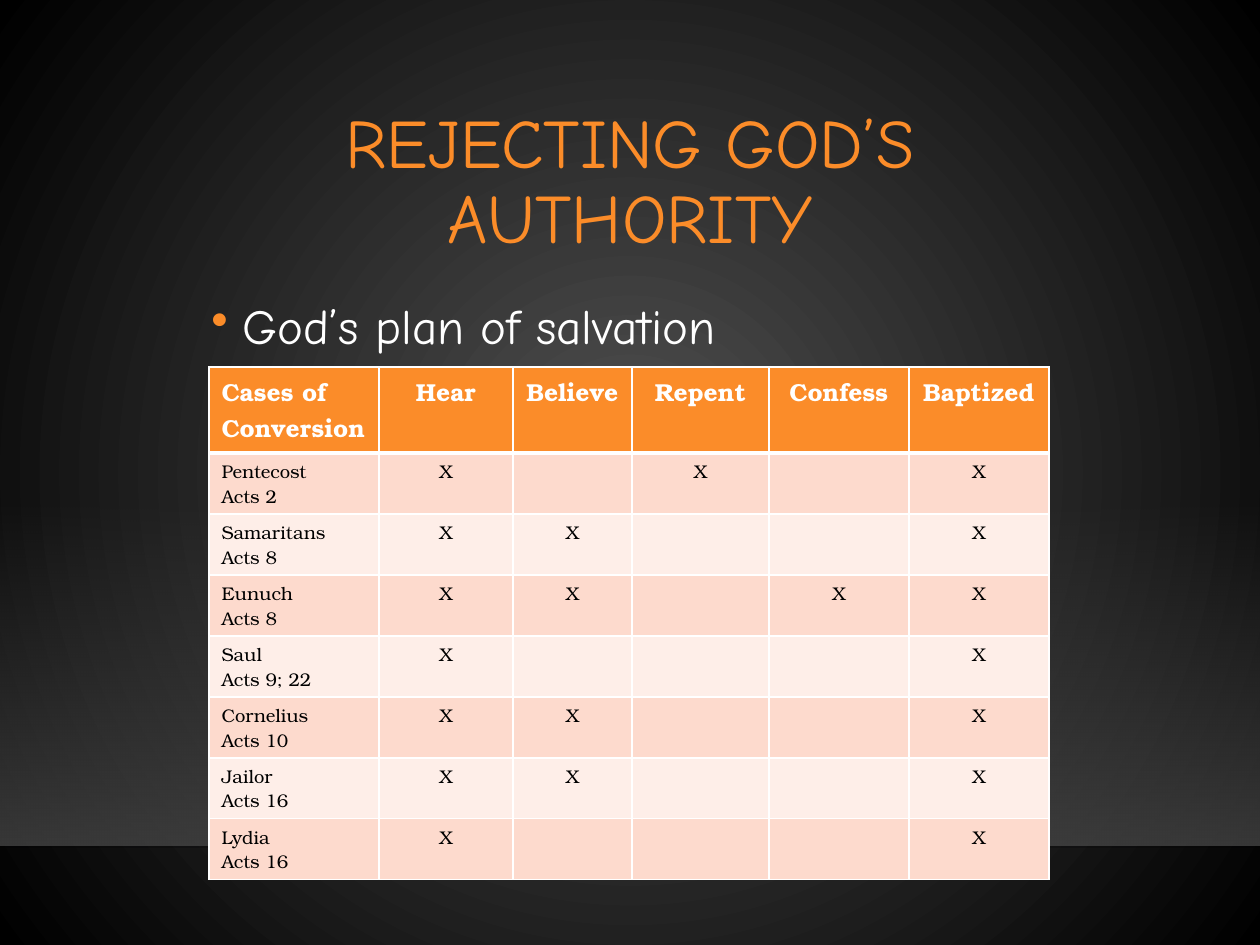
import pptx
import pptx.util
import pptx.oxml
import pptx.dml.color
import pptx.enum.shapes
import pptx.enum.text

PX = 914400 // 126
COLORS = {"accent": "FB8C29", "white": "FFFFFF", "black": "000000", "center": "505050",
          "floor": "454545", "edge": "000001", "band_dark": "FDDACD", "band_light": "FEEEE8"}
HEAD_FONT, TABLE_FONT = "Comic Neue", "TeX Gyre Bonum"
NS = 'xmlns:a="http://schemas.openxmlformats.org/drawingml/2006/main"'
ALIGN = pptx.enum.text.PP_ALIGN


def add_run(p, text, size, font, color, bold=False):
    r = p.add_run()
    r.text = text
    r.font.size = pptx.util.Pt(size)
    r.font.name = font
    r.font.bold = bold
    r.font.color.rgb = pptx.dml.color.RGBColor.from_string(COLORS[color])


def gradient(stops, direction):
    gs = "".join(f'<a:gs pos="{pos * 1000}"><a:srgbClr val="{COLORS[color]}">'
                 f'<a:alpha val="{alpha * 1000}"/></a:srgbClr></a:gs>' for pos, color, alpha in stops)
    return pptx.oxml.parse_xml(f'<a:gradFill {NS} rotWithShape="1"><a:gsLst>{gs}</a:gsLst>{direction}</a:gradFill>')


prs = pptx.Presentation()
prs.slide_width, prs.slide_height = 1260 * PX, 945 * PX
s = prs.slides.add_slide(prs.slide_layouts[5])

# Background: radial glow
s.background.fill.gradient()
old = s.background._cSld.bg.bgPr.find(pptx.oxml.ns.qn("a:gradFill"))
old.getparent().replace(old, gradient(
    [(0, "center", 100), (100, "black", 100)],
    '<a:path path="circle"><a:fillToRect l="50000" t="50000" r="50000" b="50000"/></a:path>'))

# Floor glow and its edge line
floor = s.shapes.add_shape(pptx.enum.shapes.MSO_SHAPE.RECTANGLE, 0, 499 * PX, 1260 * PX, 347 * PX)
floor.shadow.inherit = False
floor.line.fill.background()
floor.fill.gradient()
old = floor._element.spPr.find(pptx.oxml.ns.qn("a:gradFill"))
old.getparent().replace(old, gradient([(0, "floor", 0), (100, "floor", 80)], '<a:lin ang="5400000" scaled="0"/>'))

edge = s.shapes.add_connector(pptx.enum.shapes.MSO_CONNECTOR.STRAIGHT, 0, 847 * PX, 1260 * PX, 847 * PX)
edge.line.width = pptx.util.Pt(1)
edge.line.color.rgb = pptx.dml.color.RGBColor.from_string(COLORS["edge"])
edge_color = edge.line._ln.find(".//" + pptx.oxml.ns.qn("a:srgbClr"))
edge_color.append(pptx.oxml.parse_xml(f'<a:alpha {NS} val="20000"/>'))
edge._element.spPr.append(pptx.oxml.parse_xml(f"<a:effectLst {NS}/>"))

# Title
title = s.shapes.title
title.left, title.top, title.width, title.height = 199 * PX, 111 * PX, 862 * PX, 145 * PX
tf = title.text_frame
tf.vertical_anchor = pptx.enum.text.MSO_ANCHOR.MIDDLE
p = tf.paragraphs[0]
p.alignment = ALIGN.CENTER
p.line_spacing = 0.9
add_run(p, "REJECTING GOD’S AUTHORITY", 39.6, HEAD_FONT, "accent")

# Bullet line
tf = s.shapes.add_textbox(199 * PX, 278 * PX, 862 * PX, 475 * PX).text_frame
tf.word_wrap = True
p = tf.paragraphs[0]
pPr = p._p.get_or_add_pPr()
pPr.set("marL", "228600")
pPr.set("indent", "-228600")
for xml in (f'<a:buClr {NS}><a:srgbClr val="{COLORS["accent"]}"/></a:buClr>',
            f'<a:buChar {NS} char="•"/>'):
    pPr.append(pptx.oxml.parse_xml(xml))
p.line_spacing = 1.2
add_run(p, "God’s plan of salvation", 28, HEAD_FONT, "white")

# Table of conversions: case, passage, steps mentioned
steps = ["Hear", "Believe", "Repent", "Confess", "Baptized"]
cases = [
    ("Pentecost", "Acts 2", "Hear Repent Baptized"),
    ("Samaritans", "Acts 8", "Hear Believe Baptized"),
    ("Eunuch", "Acts 8", "Hear Believe Confess Baptized"),
    ("Saul", "Acts 9; 22", "Hear Baptized"),
    ("Cornelius", "Acts 10", "Hear Believe Baptized"),
    ("Jailor", "Acts 16", "Hear Believe Baptized"),
    ("Lydia", "Acts 16", "Hear Baptized"),
]
rows = [[["Cases of Conversion"]] + [[step] for step in steps]]
for name, passage, found in cases:
    rows.append([[name, passage]] + [["X"] if step in found.split() else [] for step in steps])

widths = [170, 134, 119, 137, 140, 140]
heights = [86] + [61] * len(cases)
table = s.shapes.add_table(len(rows), len(widths), 209 * PX, 367 * PX,
                           sum(widths) * PX, sum(heights) * PX).table
for column, width in zip(table.columns, widths):
    column.width = width * PX
for row, height in zip(table.rows, heights):
    row.height = height * PX

for i, row in enumerate(rows):
    fill = "accent" if i == 0 else ("band_dark" if i % 2 else "band_light")
    size, color = (14, "white") if i == 0 else (10.5, "black")
    for j, lines in enumerate(row):
        cell = table.cell(i, j)
        cell.fill.solid()
        cell.fill.fore_color.rgb = pptx.dml.color.RGBColor.from_string(COLORS[fill])
        for k, text in enumerate(lines):
            p = cell.text_frame.add_paragraph() if k else cell.text_frame.paragraphs[0]
            p.alignment = ALIGN.CENTER if j else ALIGN.LEFT
            add_run(p, text, size, TABLE_FONT, color, bold=i == 0)
        # White rules, thicker under the header
        for n, side in enumerate("LRTB"):
            thick = (i, side) in ((0, "B"), (1, "T"))
            cell._tc.get_or_add_tcPr().insert(n, pptx.oxml.parse_xml(
                f'<a:ln{side} {NS} w="{38100 if thick else 12700}"><a:solidFill>'
                f'<a:srgbClr val="{COLORS["white"]}"/></a:solidFill></a:ln{side}>'))

prs.save("out.pptx")
